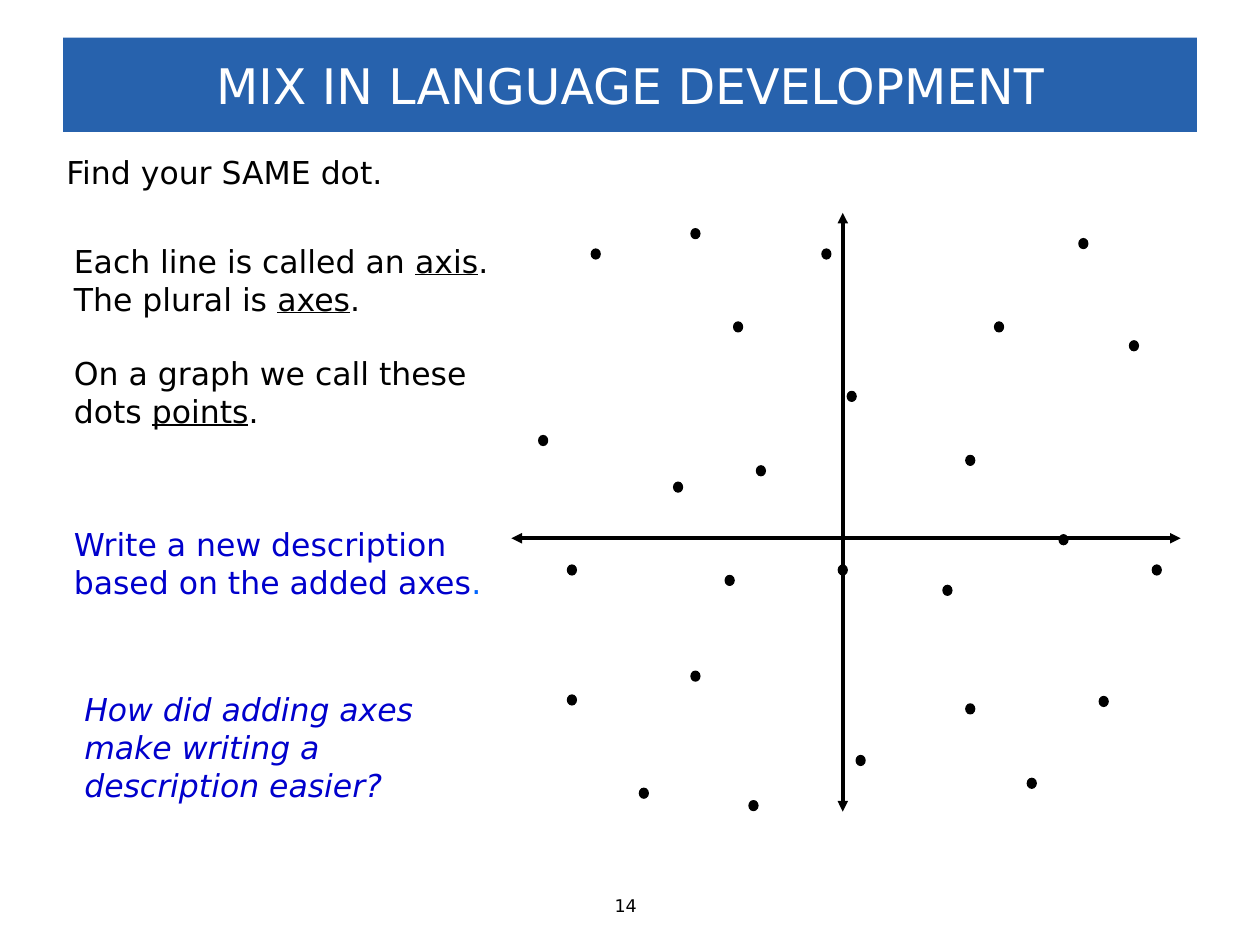
from lxml import etree
from pptx import Presentation
from pptx.dml.color import RGBColor
from pptx.enum.shapes import MSO_CONNECTOR as Connector, MSO_SHAPE as Shape
from pptx.enum.text import MSO_ANCHOR as Anchor, MSO_AUTO_SIZE as AutoSize, PP_ALIGN as Align
from pptx.oxml.ns import qn
from pptx.util import Cm, Pt

FONT = "DejaVu Sans"
BLACK, WHITE, BAR, BLUE, LIGHT_BLUE = "000000", "FFFFFF", "2762AD", "0000CC", "0066FF"
BODY = {"name": FONT, "size": Pt(18), "color": BLACK}
TASK = {**BODY, "color": BLUE}
UNDERLINED = {"underline": True}

TITLE = "MIX IN LANGUAGE DEVELOPMENT"
TITLE_BOX = (1.27, 0.76, 22.86, 1.9)

# box in cm, base format, hanging indent in cm, paragraphs of (text, changes) runs
TEXTS = [
    ((1.09, 2.97, 7.47, 1.02), BODY, 1.27, [[("Find your SAME dot.", {})]]),
    ((1.24, 4.75, 9.47, 4.11), BODY, 1.27, [
        [("Each line is called an ", {}), ("axis", UNDERLINED), (".", {})],
        [("The plural is ", {}), ("axes", UNDERLINED), (".", {})],
        [("On a graph we call these", {})],
        [("dots ", {}), ("points", UNDERLINED), (".", {})],
    ]),
    ((1.24, 10.46, 9.17, 1.8), TASK, 0, [
        [("Write a new description based on the added axes", {}), (".", {"color": LIGHT_BLUE})],
    ]),
    ((1.45, 13.79, 8, 2.57), {**TASK, "italic": True}, 0, [
        [("How did adding axes make writing a description easier?", {})],
    ]),
    ((12.14, 17.91, 1.12, 0.69), {**BODY, "size": Pt(10)}, 0, [[("14", {})]]),
]
GAP_BEFORE = {"On a graph we call these": Pt(21)}

AXES = [(10.31, 10.85, 23.8, 10.85), (16.99, 16.36, 16.99, 4.29)]
DOT_SIZE = (0.2, 0.18)
DOT_CENTRES = [
    (11.53, 11.49), (11.53, 14.11), (12.98, 15.99), (14.02, 13.63), (16.99, 11.49),
    (17.35, 15.33), (14.71, 11.7), (10.95, 8.88), (13.67, 9.82), (14.88, 6.59),
    (17.17, 7.99), (15.19, 16.24), (19.56, 14.29), (20.8, 15.79), (19.56, 9.28),
    (19.1, 11.9), (22.25, 14.14), (20.14, 6.59), (21.44, 10.88), (16.66, 5.12),
    (21.84, 4.91), (22.86, 6.97), (23.32, 11.49), (14.02, 4.71), (12.01, 5.12),
    (15.34, 9.49),
]


def cm(values):
    return [Cm(value) for value in values]


def paint(color_format, color):
    color_format.rgb = RGBColor.from_string(color)


def fill_with(shape, color):
    shape.fill.solid()
    paint(shape.fill.fore_color, color)


def add_run(paragraph, text, style):
    run = paragraph.add_run()
    run.text = text
    for name, value in style.items():
        if name == "color":
            paint(run.font.color, value)
        else:
            setattr(run.font, name, value)


def add_title(slide):
    title = slide.shapes.title
    title.left, title.top, title.width, title.height = cm(TITLE_BOX)
    fill_with(title, BAR)
    frame = title.text_frame
    frame.vertical_anchor = Anchor.MIDDLE
    paragraph = frame.paragraphs[0]
    paragraph.alignment = Align.CENTER
    add_run(paragraph, TITLE, {**BODY, "size": Pt(28), "color": WHITE})


def add_text(slide, box, style, hanging, paragraphs):
    frame = slide.shapes.add_textbox(*cm(box)).text_frame
    frame.word_wrap = True
    frame.auto_size = AutoSize.SHAPE_TO_FIT_TEXT
    for index, runs in enumerate(paragraphs):
        paragraph = frame.add_paragraph() if index else frame.paragraphs[0]
        if hanging:
            properties = paragraph._p.get_or_add_pPr()
            properties.set("marL", str(Cm(hanging)))
            properties.set("indent", str(-Cm(hanging)))
        paragraph.space_before = GAP_BEFORE.get(runs[0][0], Pt(0))
        for text, changes in runs:
            add_run(paragraph, text, {**style, **changes})


def add_dot(graph, x, y):
    width, height = DOT_SIZE
    box = cm((x - width / 2, y - height / 2, width, height))
    dot = graph.shapes.add_shape(Shape.OVAL, *box)
    dot.rotation = 270
    dot.shadow.inherit = False
    fill_with(dot, BLACK)
    paint(dot.line.color, BLACK)
    dot.line.width = Pt(0.75)


def add_axis(graph, ends):
    axis = graph.shapes.add_connector(Connector.STRAIGHT, *cm(ends))
    paint(axis.line.color, BLACK)
    axis.line.width = Pt(2)
    line = axis.line._get_or_add_ln()
    for end in ("a:headEnd", "a:tailEnd"):
        etree.SubElement(line, qn(end), type="triangle")
    etree.SubElement(axis._element.spPr, qn("a:effectLst"))


def main():
    presentation = Presentation()
    presentation.slide_width, presentation.slide_height = cm((25.4, 19.05))
    slide = presentation.slides.add_slide(presentation.slide_layouts[5])
    add_title(slide)
    graph = slide.shapes.add_group_shape()
    for centre in DOT_CENTRES:
        add_dot(graph, *centre)
    for ends in AXES:
        add_axis(graph, ends)
    for text in TEXTS:
        add_text(slide, *text)
    presentation.save("out.pptx")


if __name__ == "__main__":
    main()
